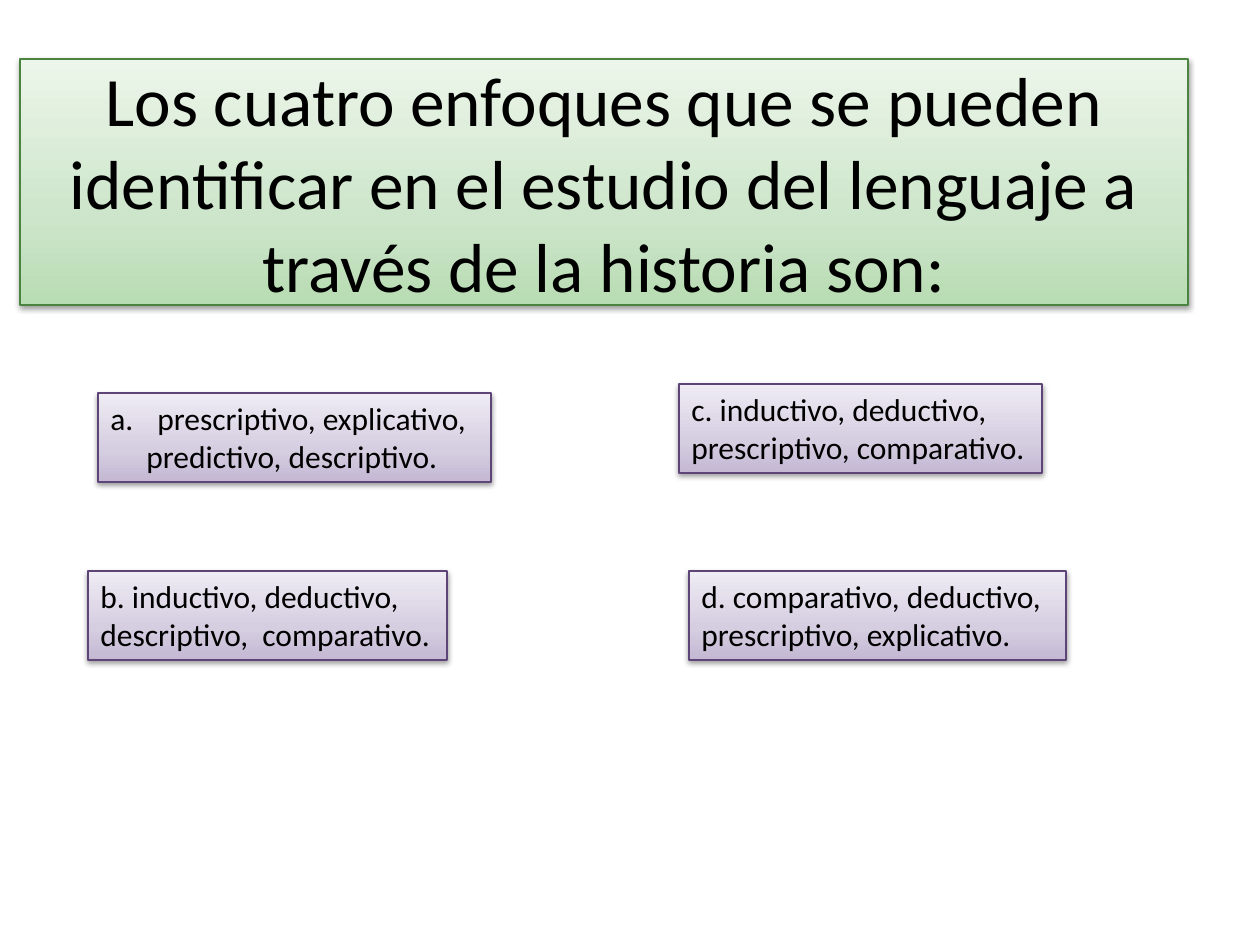
import copy

import pptx
import pptx.dml.color
import pptx.enum.text
import pptx.oxml
import pptx.oxml.ns
import pptx.util

RGBColor = pptx.dml.color.RGBColor
BLACK = RGBColor(0x00, 0x00, 0x00)
GREEN_LINE = RGBColor(0x4B, 0x84, 0x3F)
GREENS = [RGBColor(0xB8, 0xDC, 0xB3), RGBColor(0xCD, 0xE5, 0xCA), RGBColor(0xEC, 0xF6, 0xEA)]
PURPLE_LINE = RGBColor(0x5E, 0x45, 0x77)
PURPLES = [RGBColor(0xC4, 0xB8, 0xD4), RGBColor(0xD5, 0xCD, 0xE0), RGBColor(0xEF, 0xEC, 0xF4)]
STOPS = [0, 0.35, 1]
FONT = "Calibri"
NAMESPACE = pptx.oxml.ns.nsdecls("a")
SHADOW = (
    f'<a:outerShdw {NAMESPACE} blurRad="40000" dist="20000" dir="5400000" rotWithShape="0">'
    '<a:srgbClr val="000000"><a:alpha val="38000"/></a:srgbClr></a:outerShdw>'
)


def px(length):
    return pptx.util.Emu(round(length * 914400 / 126))


def style_panel(shape, colors, line_color):
    """Give a shape its three-stop gradient, thin outline and soft shadow."""
    shape.fill.gradient()
    shape.fill.gradient_angle = 90
    stop_list = shape.fill._fill._gradFill.gsLst
    stop_list.append(copy.deepcopy(stop_list[0]))
    for stop, position, color in zip(shape.fill.gradient_stops, STOPS, colors):
        stop.position = position
        stop.color.rgb = color
    shape.line.color.rgb = line_color
    shape.line.width = pptx.util.Pt(0.75)
    shape.shadow.inherit = False
    effects = shape._element.spPr.find(pptx.oxml.ns.qn("a:effectLst"))
    effects.append(pptx.oxml.parse_xml(SHADOW))


presentation = pptx.Presentation()
presentation.slide_width = px(1260)
presentation.slide_height = px(945)
slide = presentation.slides.add_slide(presentation.slide_layouts[5])

# Question
title = slide.shapes.title
title.left, title.top, title.width, title.height = px(20), px(59), px(1168), px(246)
style_panel(title, GREENS, GREEN_LINE)
title.text_frame.text = (
    "Los cuatro enfoques que se pueden identificar en el estudio "
    "del lenguaje a través de la historia son:"
)
title.text_frame.auto_size = pptx.enum.text.MSO_AUTO_SIZE.NONE
title.text_frame.vertical_anchor = pptx.enum.text.MSO_ANCHOR.MIDDLE
paragraph = title.text_frame.paragraphs[0]
paragraph.alignment = pptx.enum.text.PP_ALIGN.CENTER
paragraph.font.name = FONT
paragraph.font.size = pptx.util.Pt(39.6)
paragraph.font.color.rgb = BLACK

# Answer options: left, top, width, lines
options = [
    (98, 393, 393, ["prescriptivo, explicativo,", "predictivo, descriptivo."]),
    (88, 571, 359, ["b. inductivo, deductivo,", "descriptivo,  comparativo."]),
    (679, 384, 363, ["c. inductivo, deductivo,", "prescriptivo, comparativo."]),
    (689, 571, 377, ["d. comparativo, deductivo,", "prescriptivo, explicativo."]),
]
boxes = []
for left, top, width, lines in options:
    box = slide.shapes.add_textbox(px(left), px(top), px(width), px(89))
    style_panel(box, PURPLES, PURPLE_LINE)
    box.text_frame.text = "\n".join(lines)
    box.text_frame.word_wrap = False
    box.text_frame.auto_size = pptx.enum.text.MSO_AUTO_SIZE.SHAPE_TO_FIT_TEXT
    boxes.append(box)

# The first option is lettered automatically, with its second line indented
first_line, second_line = boxes[0].text_frame.paragraphs
properties = first_line._p.get_or_add_pPr()
properties.set("marL", str(px(47)))
properties.set("indent", str(-px(47)))
properties.append(pptx.oxml.parse_xml(f'<a:buAutoNum {NAMESPACE} type="alphaLcPeriod"/>'))
second_line._p.get_or_add_pPr().set("marL", str(px(36)))

for box in boxes:
    for paragraph in box.text_frame.paragraphs:
        paragraph.font.name = FONT
        paragraph.font.size = pptx.util.Pt(18)
        paragraph.font.color.rgb = BLACK

presentation.save("out.pptx")
